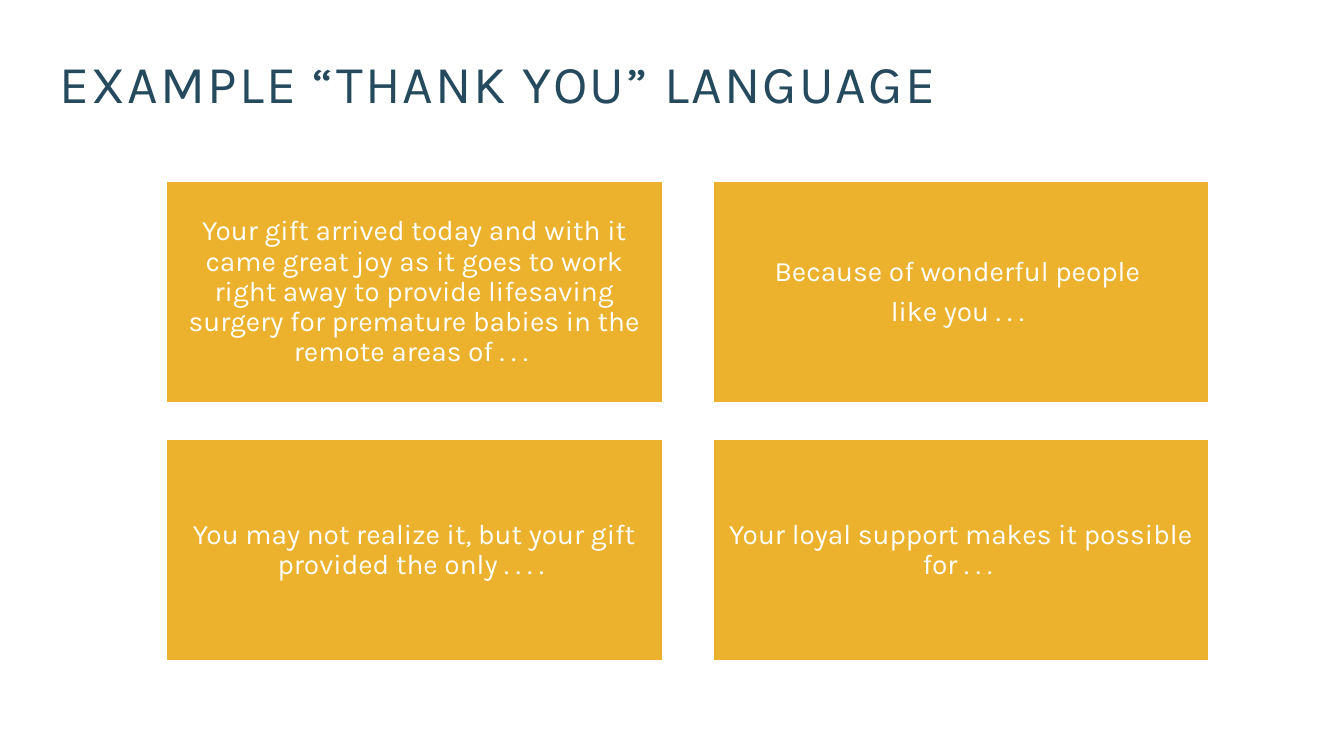
from dataclasses import dataclass

from pptx import Presentation
from pptx.dml.color import RGBColor
from pptx.enum.shapes import MSO_SHAPE
from pptx.enum.text import MSO_ANCHOR, PP_ALIGN
from pptx.util import Inches, Pt

RECT = MSO_SHAPE.RECTANGLE
MIDDLE = MSO_ANCHOR.MIDDLE
LEFT, CENTER = PP_ALIGN.LEFT, PP_ALIGN.CENTER


@dataclass(frozen=True)
class Theme:
    font: str = "Karla"
    navy: RGBColor = RGBColor(0x25, 0x4A, 0x5D)
    gold: RGBColor = RGBColor(0xEC, 0xB2, 0x2D)
    white: RGBColor = RGBColor(0xFF, 0xFF, 0xFF)
    title_size: Pt = Pt(38)
    card_size: Pt = Pt(20)


theme = Theme()


def set_all(obj, values):
    for name, value in values.items():
        setattr(obj, name, value)


def add_text(p, text, size, color, para_format):
    set_all(p, para_format)
    r = p.add_run()
    r.text = text
    set_all(r.font, {"name": theme.font, "size": size})
    r.font.color.rgb = color
    return r


prs = Presentation()
prs.slide_width, prs.slide_height = Inches(13.33), Inches(7.5)
slide = prs.slides.add_slide(prs.slide_layouts[5])

# Title
title = slide.shapes.title
set_all(title, {"left": Inches(0.49), "top": Inches(0.52),
                "width": Inches(11.5), "height": Inches(0.68)})
tf = title.text_frame
set_all(tf, {"word_wrap": True, "vertical_anchor": MIDDLE})
r = add_text(tf.paragraphs[0], "EXAMPLE “THANK YOU” LANGUAGE",
             theme.title_size, theme.navy,
             {"alignment": LEFT, "line_spacing": 0.9})
r.font._element.set("spc", "150")

# Cards in a two-column grid, one list of paragraphs each
cards = [
    ["Your gift arrived today and with it came great joy as it goes to work "
     "right away to provide lifesaving surgery for premature babies in the "
     "remote areas of . . . "],
    ["Because of wonderful people ", "like you . . . "],
    ["You may not realize it, but your gift provided the only . . . . "],
    ["Your loyal support makes it possible for . . . "],
]
grid_left, grid_top = 1.65, 1.8
card_w, card_h = 4.92, 2.2
step_x, step_y = 5.42, 2.56
card_frame = {"word_wrap": True, "vertical_anchor": MIDDLE}
card_frame.update({f"margin_{side}": Inches(0.08)
                   for side in ("left", "top", "right", "bottom")})
card_para = {"alignment": CENTER, "line_spacing": 0.9, "space_after": Pt(7)}

for i, lines in enumerate(cards):
    row, col = divmod(i, 2)
    sp = slide.shapes.add_shape(
        RECT, Inches(grid_left + col * step_x), Inches(grid_top + row * step_y),
        Inches(card_w), Inches(card_h))
    sp.shadow.inherit = False
    sp.fill.solid()
    sp.fill.fore_color.rgb = theme.gold
    sp.line.color.rgb = theme.white
    sp.line.width = Pt(1)
    tf = sp.text_frame
    set_all(tf, card_frame)
    for n, line in enumerate(lines):
        p = tf.add_paragraph() if n else tf.paragraphs[0]
        add_text(p, line, theme.card_size, theme.white, card_para)

prs.save("out.pptx")
